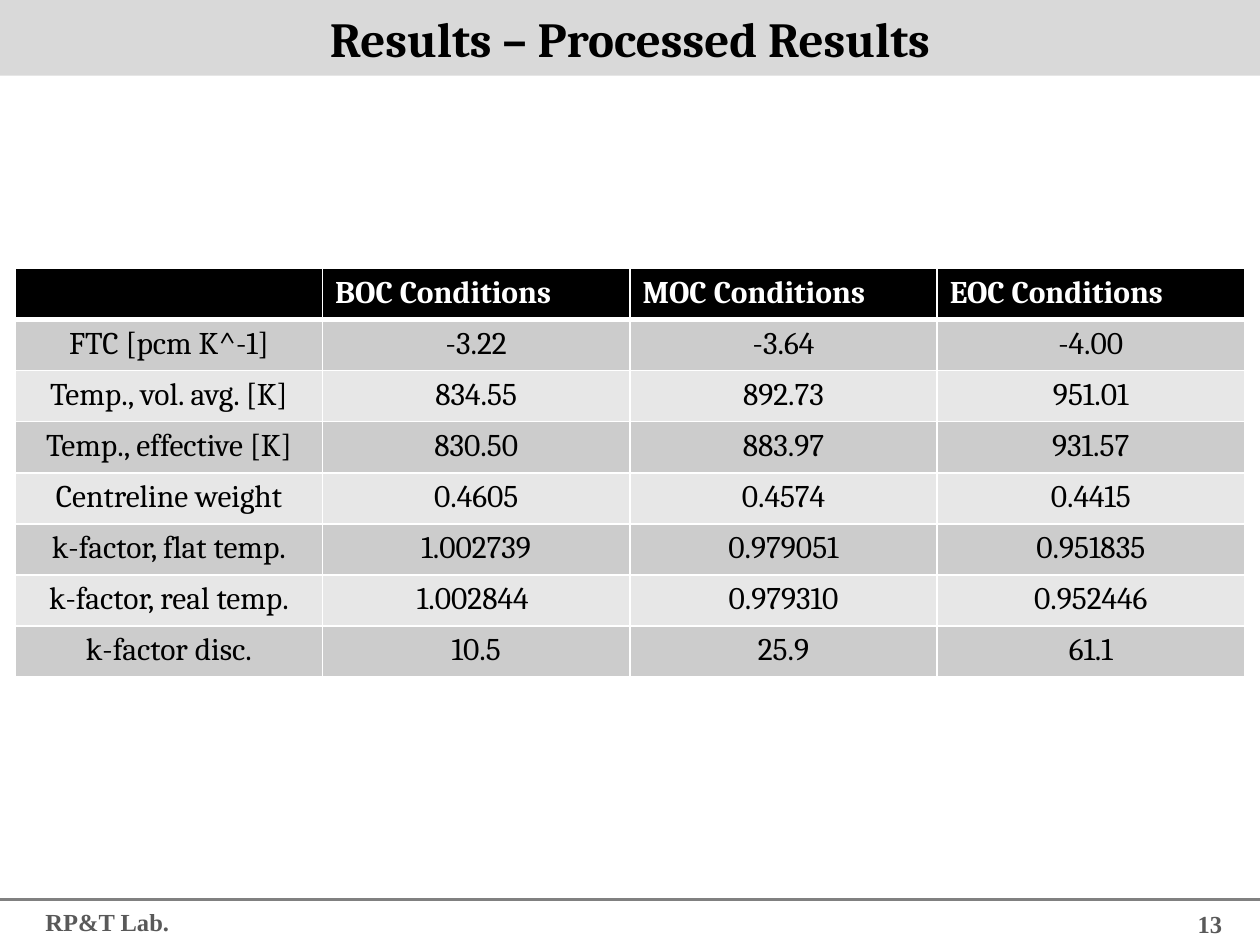
from lxml import etree
from pptx import Presentation
from pptx import util as u
from pptx.dml.color import RGBColor
from pptx.enum import shapes, text
from pptx.oxml.ns import qn

Pt = u.Pt
COLORS = {
    "black": "000000", "white": "FFFFFF", "band": "D9D9D9", "rule": "808080",
    "footer": "595959", "row_dark": "CCCCCC", "row_light": "E7E7E7",
}
PAGE_WIDTH, PAGE_HEIGHT = 720, 540
ROWS = [
    ("", "BOC Conditions", "MOC Conditions", "EOC Conditions"),
    ("FTC [pcm K^-1]", "-3.22", "-3.64", "-4.00"),
    ("Temp., vol. avg. [K]", "834.55", "892.73", "951.01"),
    ("Temp., effective [K]", "830.50", "883.97", "931.57"),
    ("Centreline weight", "0.4605", "0.4574", "0.4415"),
    ("k-factor, flat temp.", "1.002739", "0.979051", "0.951835"),
    ("k-factor, real temp.", "1.002844 ", "0.979310", "0.952446"),
    ("k-factor disc.", "10.5", "25.9", "61.1"),
]


def rgb(name):
    return RGBColor.from_string(COLORS[name])


def write(frame, words, size, font, color, bold, align):
    para = frame.paragraphs[0]
    para.alignment = align
    span = para.add_run()
    span.text = words
    span.font.size = Pt(size)
    span.font.name = font
    span.font.bold = bold
    span.font.color.rgb = rgb(color)


def border_cell(cell, bottom_width=1, top_width=1):
    """Draw white borders; they must come before the fill in the cell XML."""
    props = cell._tc.get_or_add_tcPr()
    widths = {"a:lnL": 1, "a:lnR": 1, "a:lnT": top_width, "a:lnB": bottom_width}
    for place, (tag, width) in enumerate(widths.items()):
        line = etree.Element(qn(tag), w=str(Pt(width)))
        fill = etree.SubElement(line, qn("a:solidFill"))
        etree.SubElement(fill, qn("a:srgbClr"), val=COLORS["white"])
        props.insert(place, line)


def add_title(page, left, top, width, height):
    box = page.shapes.add_shape(shapes.MSO_SHAPE.RECTANGLE,
                                Pt(left), Pt(top), Pt(width), Pt(height))
    box.shadow.inherit = False
    box.fill.solid()
    box.fill.fore_color.rgb = rgb("band")
    box.line.fill.background()
    box.text_frame.vertical_anchor = text.MSO_ANCHOR.MIDDLE
    write(box.text_frame, "Results – Processed Results", 28, "Cambria",
          "black", True, text.PP_ALIGN.CENTER)


def add_results(page, left, top, width, height):
    table = page.shapes.add_table(len(ROWS), len(ROWS[0]), Pt(left), Pt(top),
                                  Pt(width), Pt(height)).table
    for column in table.columns:
        column.width = Pt(width / len(ROWS[0]))
    for i, values in enumerate(ROWS):
        table.rows[i].height = Pt(height / len(ROWS))
        header = i == 0
        fill = "black" if header else "row_dark" if i % 2 else "row_light"
        for j, value in enumerate(values):
            cell = table.cell(i, j)
            cell.fill.solid()
            cell.fill.fore_color.rgb = rgb(fill)
            border_cell(cell, 3 if header else 1, 3 if i == 1 else 1)
            if value:
                write(cell.text_frame, value, 18, "Cambria",
                      "white" if header else "black", header,
                      text.PP_ALIGN.LEFT if header else text.PP_ALIGN.CENTER)


def add_footer(page, left, top, width):
    # Rule across the page
    rule = page.shapes.add_connector(shapes.MSO_CONNECTOR.STRAIGHT,
                                     Pt(left), Pt(top), Pt(left + width), Pt(top))
    rule.line.color.rgb = rgb("rule")
    rule.line.width = Pt(2)
    etree.SubElement(rule._element.spPr, qn("a:effectLst"))
    # Lab name and page number
    for words, offset, drop, box_width in (("RP&T Lab.", 15.8, 0.8, 88),
                                           ("13", 636.5, 2.2, 69)):
        box = page.shapes.add_textbox(Pt(left + offset), Pt(top + drop),
                                      Pt(box_width), Pt(22))
        box.text_frame.word_wrap = True
        write(box.text_frame, words, 14, "Times New Roman", "footer", True,
              text.PP_ALIGN.RIGHT)


def main():
    deck = Presentation()
    deck.slide_width, deck.slide_height = Pt(PAGE_WIDTH), Pt(PAGE_HEIGHT)
    page = deck.slides.add_slide(deck.slide_layouts[6])
    add_footer(page, 0, 514, PAGE_WIDTH)
    add_title(page, 0, 0, PAGE_WIDTH, 43.2)
    add_results(page, 8.8, 153.4, 702.4, 233.6)
    deck.save("out.pptx")


if __name__ == "__main__":
    main()
